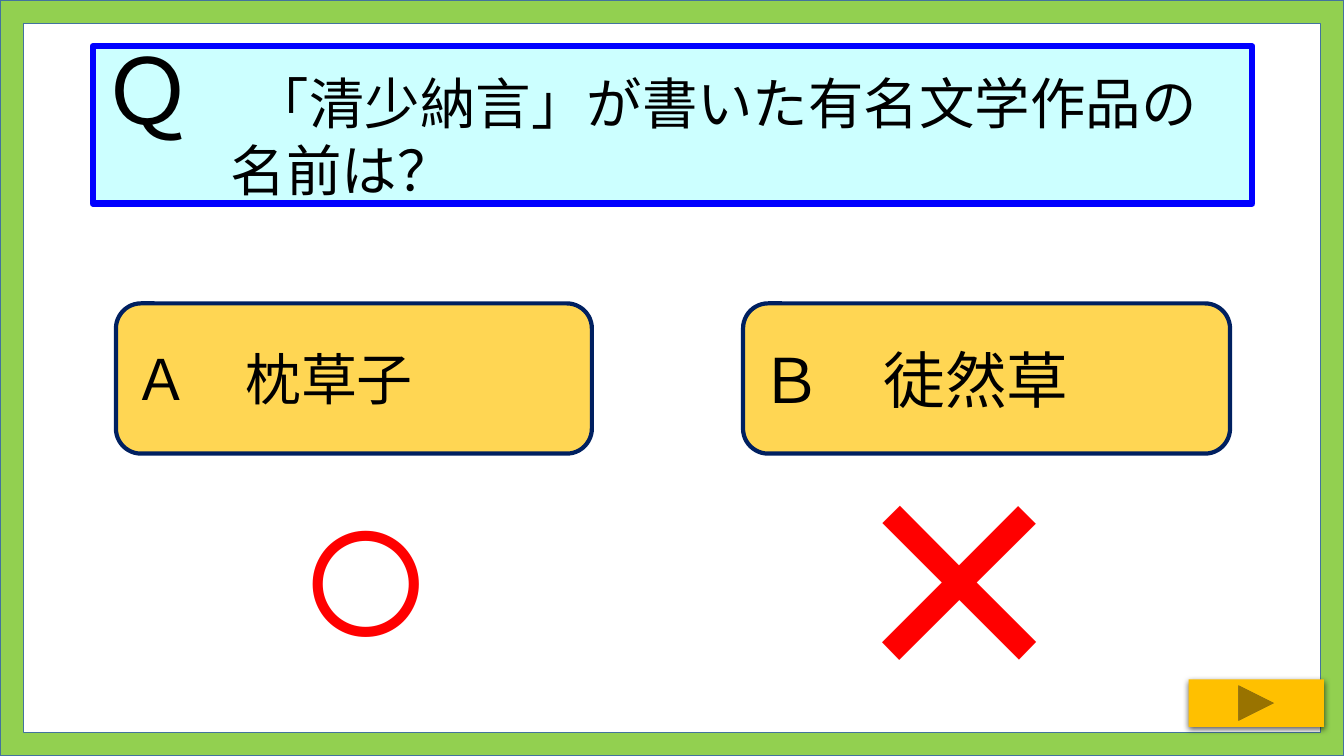
from lxml import etree
from pptx import Presentation
from pptx.dml.color import RGBColor
from pptx.enum.shapes import MSO_SHAPE
from pptx.enum.text import MSO_ANCHOR, MSO_AUTO_SIZE, PP_ALIGN
from pptx.oxml import parse_xml
from pptx.oxml.ns import nsdecls, qn
from pptx.util import Inches, Pt

FRAME = MSO_SHAPE.FRAME
RECTANGLE = MSO_SHAPE.RECTANGLE
ROUNDED = MSO_SHAPE.ROUNDED_RECTANGLE
NEXT_BUTTON = MSO_SHAPE.ACTION_BUTTON_FORWARD_OR_NEXT
MIDDLE = MSO_ANCHOR.MIDDLE
GROW = MSO_AUTO_SIZE.SHAPE_TO_FIT_TEXT
LEFT, CENTER = PP_ALIGN.LEFT, PP_ALIGN.CENTER

GREEN = RGBColor(0x92, 0xD0, 0x50)
STEEL = RGBColor(0x43, 0x73, 0x9E)
PALE_CYAN = RGBColor(0xCC, 0xFF, 0xFF)
BLUE = RGBColor(0x00, 0x00, 0xFF)
YELLOW = RGBColor(0xFF, 0xD6, 0x53)
NAVY = RGBColor(0x00, 0x20, 0x60)
GOLD = RGBColor(0xFF, 0xC0, 0x00)
RED = RGBColor(0xFF, 0x00, 0x00)
BLACK = RGBColor(0x00, 0x00, 0x00)

QUESTION = [("Ｑ", 64.8), ("　", 43.2), ("「清少納言」が書いた有名文学作品の名前は？", 39.6)]
ANSWERS = [
    ("Ａ　枕草子", 40, 1.15, 4.72, "○", 172, 2.25),
    ("Ｂ　徒然草", 44, 7.37, 4.83, "×", 247, 8.14),
]


class QuizSlide:
    text_font = "Noto Sans CJK JP"
    mark_font = "Arial"

    def __init__(self, slide):
        self.slide = slide

    def panel(self, kind, box, fill, line=None, width=0):
        panel = self.slide.shapes.add_shape(kind, *map(Inches, box))
        panel.shadow.inherit = False
        panel.fill.solid()
        panel.fill.fore_color.rgb = fill
        if line is None:
            panel.line.fill.background()
        else:
            panel.line.color.rgb = line
            panel.line.width = Pt(width)
        return panel

    def add_text(self, frame, pieces, font, color, **layout):
        frame.word_wrap = True
        frame.vertical_anchor = MIDDLE
        paragraph = frame.paragraphs[0]
        for attribute, value in layout.items():
            setattr(paragraph, attribute, value)
        for words, size in pieces:
            run = paragraph.add_run()
            run.text = words
            style = {"name": font, "size": Pt(size), "bold": False}
            for attribute, value in style.items():
                setattr(run.font, attribute, value)
            run.font.color.rgb = color
            east_asian = etree.SubElement(run._r.get_or_add_rPr(), qn("a:ea"))
            east_asian.set("typeface", font)
        return paragraph

    def label(self, panel, pieces, hanging, line_spacing=1.0):
        paragraph = self.add_text(panel.text_frame, pieces, self.text_font, BLACK,
                                  alignment=LEFT, line_spacing=line_spacing)
        properties = paragraph._p.get_or_add_pPr()
        properties.set("marL", str(Inches(hanging)))
        properties.set("indent", str(-Inches(hanging)))

    def mark(self, symbol, size, left):
        box = self.slide.shapes.add_textbox(*map(Inches, (left, 4.18, 2.76, 2.76)))
        paragraph = self.add_text(box.text_frame, [(symbol, size)], self.mark_font, RED,
                                  alignment=CENTER)
        box.text_frame.auto_size = GROW
        before = etree.SubElement(paragraph._p.get_or_add_pPr(), qn("a:spcBef"))
        etree.SubElement(before, qn("a:spcPct")).set("val", "50000")

    def next_button(self, box):
        button = self.panel(NEXT_BUTTON, box, GOLD)
        effects = button._element.spPr.find(qn("a:effectLst"))
        effects.append(parse_xml(
            f'<a:outerShdw {nsdecls("a")} blurRad="{Pt(4.5)}" dist="{Pt(1.5)}" '
            'dir="5400000" algn="ctr" rotWithShape="0"><a:srgbClr val="000000">'
            '<a:alpha val="63000"/></a:srgbClr></a:outerShdw>'))


def main():
    deck = Presentation()
    deck.slide_width, deck.slide_height = Inches(13.33), Inches(7.5)
    quiz = QuizSlide(deck.slides.add_slide(deck.slide_layouts[6]))

    border = quiz.panel(FRAME, (0, 0, 13.33, 7.5), GREEN, STEEL, 1)
    border.adjustments[0] = 0.031

    question = quiz.panel(RECTANGLE, (0.92, 0.46, 11.5, 1.56), PALE_CYAN, BLUE, 4.5)
    quiz.label(question, QUESTION, 1.27, 0.9)

    for words, size, left, width, symbol, symbol_size, symbol_left in ANSWERS:
        answer = quiz.panel(ROUNDED, (left, 3.01, width, 1.49), YELLOW, NAVY, 3)
        quiz.label(answer, [(words, size)], 0.49)
        quiz.mark(symbol, symbol_size, symbol_left)

    quiz.next_button((11.79, 6.74, 1.34, 0.47))
    deck.save("out.pptx")


if __name__ == "__main__":
    main()
